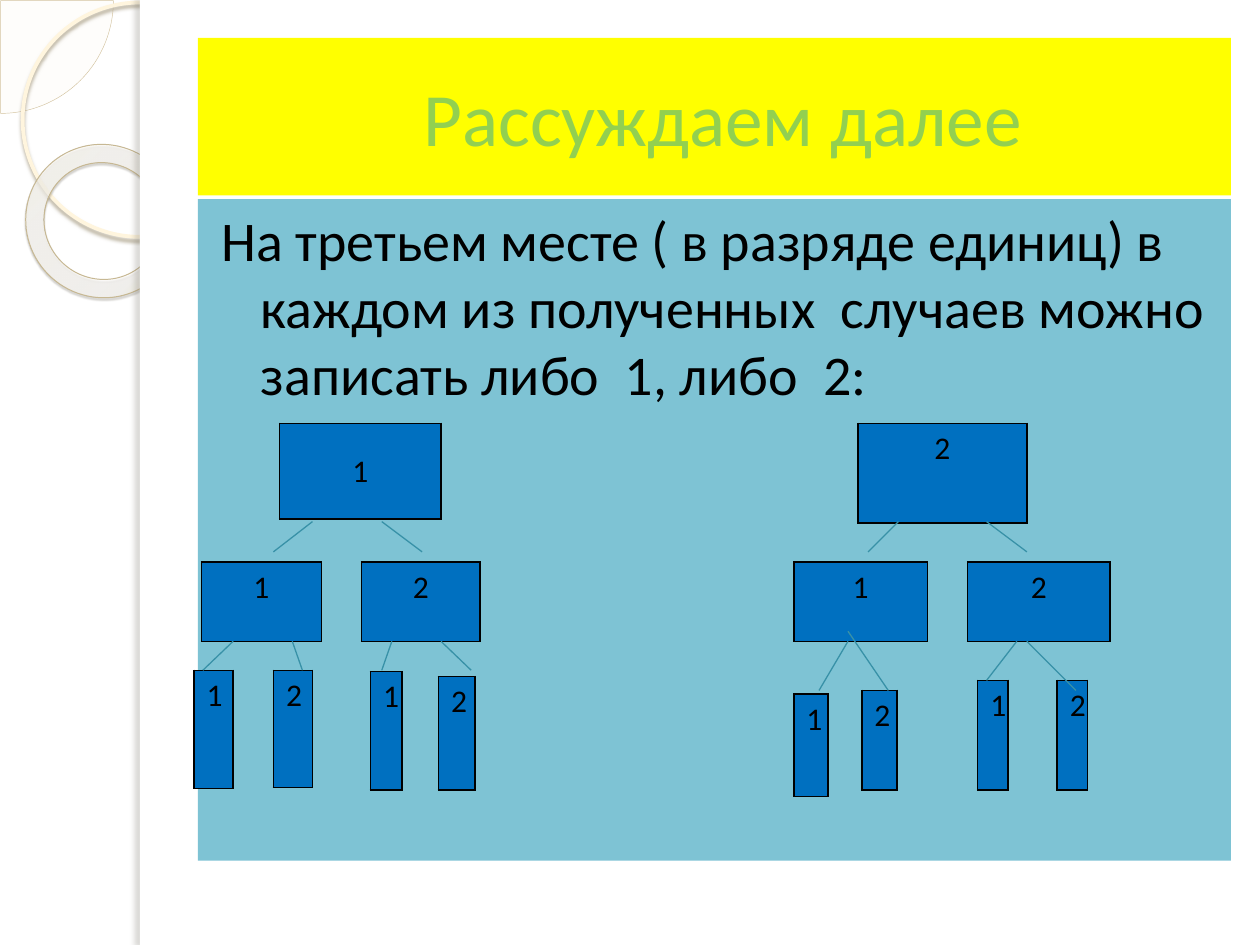
"""Build a slide showing how the third digit branches in two number trees."""
from lxml import etree
from pptx import Presentation
from pptx.dml.color import RGBColor
from pptx.enum.shapes import MSO_CONNECTOR, MSO_SHAPE
from pptx.enum.text import MSO_ANCHOR, PP_ALIGN
from pptx.oxml import parse_xml
from pptx.oxml.ns import qn
from pptx.util import Inches, Pt

CENTER, LEFT = PP_ALIGN.CENTER, PP_ALIGN.LEFT
MIDDLE, TOP = MSO_ANCHOR.MIDDLE, MSO_ANCHOR.TOP
RECTANGLE, OVAL = MSO_SHAPE.RECTANGLE, MSO_SHAPE.OVAL
PIE, DONUT = MSO_SHAPE.PIE, MSO_SHAPE.DONUT
STRAIGHT = MSO_CONNECTOR.STRAIGHT
DRAWING_NS = "http://schemas.openxmlformats.org/drawingml/2006/main"

THEME = {
    "font": "Calibri", "title_size": 43, "body_size": 32, "digit_size": 18,
    "title": "92D050", "text": "000000", "title_fill": "FFFF00",
    "body_fill": "7EC3D4", "node_fill": "0070C0", "node_border": "000000",
    "branch": "3891A7", "panel": "FFFFFF",
    "pie_fill": "FEFAF4", "pie_line": "D3C39F", "ring_line": "FFF5DE",
    "donut_line": "C7B893",
    "donut_stops": [(0, "FFFCF6", 70), (70, "FFFEFB", 55), (100, "F0D28E", 60)],
    "ring_shadow": ("B0A68F", 85, 2, 2, 90),
    "donut_shadow": ("5A5444", 35, 1, 1.2, 75),
    "panel_shadow": ("736F63", 25, 3, 3, 180),
}

TITLE = " Рассуждаем далее"
BODY = ("На третьем месте ( в разряде единиц) в каждом из полученных  "
        "случаев можно записать либо  1, либо  2:")

# digit, left, top, width, height
TREES = [
    {
        "root": ("1", 2.22, 3.36, 1.28, 0.76),
        "root_anchor": MIDDLE,
        "tens": [("1", 1.6, 4.46, 0.95, 0.63), ("2", 2.87, 4.46, 0.94, 0.63)],
        "units": [("1", 1.54, 5.32, 0.31, 0.94), ("2", 2.17, 5.32, 0.31, 0.93),
                  ("1", 2.94, 5.33, 0.25, 0.94), ("2", 3.48, 5.37, 0.29, 0.9)],
        "branches": [(2.48, 4.14, 2.17, 4.38), (3.03, 4.14, 3.35, 4.38),
                     (1.85, 5.09, 1.61, 5.32), (2.32, 5.09, 2.4, 5.32),
                     (3.11, 5.09, 3.03, 5.32), (3.5, 5.09, 3.74, 5.32)],
    },
    {
        "root": ("2", 6.81, 3.36, 1.34, 0.79),
        "root_anchor": TOP,
        "tens": [("1", 6.3, 4.46, 1.06, 0.63), ("2", 7.68, 4.46, 1.13, 0.63)],
        "units": [("1", 6.3, 5.51, 0.27, 0.81), ("2", 6.84, 5.48, 0.28, 0.79),
                  ("1", 7.76, 5.4, 0.24, 0.87), ("2", 8.39, 5.4, 0.24, 0.87)],
        "branches": [(7.13, 4.14, 6.89, 4.38), (7.83, 4.14, 8.15, 4.38),
                     (6.73, 5.09, 6.5, 5.48), (6.73, 5.01, 7.05, 5.48),
                     (8.07, 5.09, 7.83, 5.4), (8.15, 5.09, 8.54, 5.48)],
    },
]


def rgb(color):
    """Return the colour object of a hex string."""
    return RGBColor.from_string(color)


def color_xml(color, opacity):
    """Return a colour element with its opacity in percent."""
    return f'<a:srgbClr val="{color}"><a:alpha val="{opacity * 1000}"/></a:srgbClr>'


def drawing(tag, attributes, content):
    """Return a DrawingML element."""
    return parse_xml(f'<a:{tag} xmlns:a="{DRAWING_NS}" {attributes}>{content}</a:{tag}>')


def write(frame, text, size, color, align=LEFT):
    """Write one formatted paragraph and return it."""
    paragraph = frame.paragraphs[0]
    paragraph.alignment = align
    run = paragraph.add_run()
    run.text = text
    run.font.name = THEME["font"]
    run.font.size = Pt(size)
    run.font.color.rgb = rgb(color)
    return paragraph


def add_figure(slide, kind, box, fill=None, line=None, width=0, shadow=None):
    """Add a preset shape with explicit fill, line and shadow."""
    figure = slide.shapes.add_shape(kind, *map(Inches, box))
    if fill:
        figure.fill.solid()
        figure.fill.fore_color.rgb = rgb(fill)
    else:
        figure.fill.background()
    if line:
        figure.line.color.rgb = rgb(line)
        figure.line.width = Pt(width)
    else:
        figure.line.fill.background()
    figure.shadow.inherit = False
    if shadow:
        color, opacity, blur, distance, angle = shadow
        attributes = (f'blurRad="{Pt(blur)}" dist="{Pt(distance)}" '
                      f'dir="{angle * 60000}" rotWithShape="0"')
        effects = figure._element.spPr.find(qn("a:effectLst"))
        effects.append(drawing("outerShdw", attributes, color_xml(color, opacity)))
    return figure


def add_decoration(slide):
    """Add the rings of the left margin and the white panel."""
    pie = add_figure(slide, PIE, (-0.89, -0.89, 1.79, 1.79),
                     THEME["pie_fill"], THEME["pie_line"], 0.25)
    pie.adjustments[0], pie.adjustments[1] = 0, 54
    pie_color = pie._element.spPr.find(qn("a:solidFill"))[0]
    pie_color.append(drawing("alpha", 'val="33000"', ""))

    add_figure(slide, OVAL, (0.18, 0.02, 1.86, 1.86), line=THEME["ring_line"],
               width=2.15, shadow=THEME["ring_shadow"])

    donut = add_figure(slide, DONUT, (0.2, 1.15, 1.23, 1.21), line=THEME["donut_line"],
                       width=0.58, shadow=THEME["donut_shadow"])
    donut.adjustments[0] = 0.12
    donut.rotation = 38.6
    stops = "".join(f'<a:gs pos="{place * 1000}">{color_xml(color, opacity)}</a:gs>'
                    for place, color, opacity in THEME["donut_stops"])
    gradient = drawing("gradFill", 'rotWithShape="1"', (
        f'<a:gsLst>{stops}</a:gsLst><a:path path="circle">'
        '<a:fillToRect l="-408000" t="-50000" r="508000" b="150000"/></a:path>'))
    properties = donut._element.spPr
    properties.replace(properties.find(qn("a:noFill")), gradient)

    add_figure(slide, RECTANGLE, (1.11, 0, 8.89, 7.5), THEME["panel"])
    add_figure(slide, RECTANGLE, (1.11, 0, 0.08, 7.5), THEME["panel"],
               shadow=THEME["panel_shadow"])


def add_text_block(slide, text, box, fill, size, color, align=LEFT, anchor=TOP):
    """Add a filled text box and return its paragraph."""
    block = slide.shapes.add_textbox(*map(Inches, box))
    block.fill.solid()
    block.fill.fore_color.rgb = rgb(fill)
    block.text_frame.word_wrap = True
    block.text_frame.vertical_anchor = anchor
    return write(block.text_frame, text, size, color, align)


def add_node(slide, node, align=CENTER, anchor=TOP):
    """Add a one-cell table holding a digit."""
    digit, *box = node
    table = slide.shapes.add_table(1, 1, *map(Inches, box)).table
    table.first_row = table.horz_banding = False
    cell = table.cell(0, 0)
    cell.vertical_anchor = anchor
    cell.fill.solid()
    cell.fill.fore_color.rgb = rgb(THEME["node_fill"])
    write(cell.text_frame, digit, THEME["digit_size"], THEME["text"], align)
    properties = cell._tc.get_or_add_tcPr()
    border = f'<a:solidFill>{color_xml(THEME["node_border"], 100)}</a:solidFill>'
    for order, side in enumerate(("lnL", "lnR", "lnT", "lnB")):
        properties.insert(order, drawing(side, f'w="{Pt(1)}"', border))


def add_branch(slide, ends):
    """Add a thin straight line between two levels."""
    branch = slide.shapes.add_connector(STRAIGHT, *map(Inches, ends))
    branch.line.color.rgb = rgb(THEME["branch"])
    branch.line.width = Pt(0.75)
    etree.SubElement(branch._element.spPr, qn("a:effectLst"))


def add_tree(slide, tree):
    """Add the three levels of a tree and its branches."""
    add_node(slide, tree["root"], anchor=tree["root_anchor"])
    for node in tree["tens"]:
        add_node(slide, node)
    for node in tree["units"]:
        add_node(slide, node, align=LEFT)
    for ends in tree["branches"]:
        add_branch(slide, ends)


def main():
    """Build and save the presentation."""
    deck = Presentation()
    deck.slide_width, deck.slide_height = Inches(10), Inches(7.5)
    slide = deck.slides.add_slide(deck.slide_layouts[6])
    add_decoration(slide)
    add_text_block(slide, TITLE, (1.57, 0.3, 8.2, 1.25), THEME["title_fill"],
                   THEME["title_size"], THEME["title"], CENTER, MIDDLE)
    body = add_text_block(slide, BODY, (1.57, 1.58, 8.2, 5.25), THEME["body_fill"],
                          THEME["body_size"], THEME["text"])
    body.space_before = Pt(6)
    indents = body._p.get_or_add_pPr()
    indents.set("marL", str(Inches(0.4)))
    indents.set("indent", str(Inches(-0.31)))
    for tree in TREES:
        add_tree(slide, tree)
    deck.save("out.pptx")


if __name__ == "__main__":
    main()
